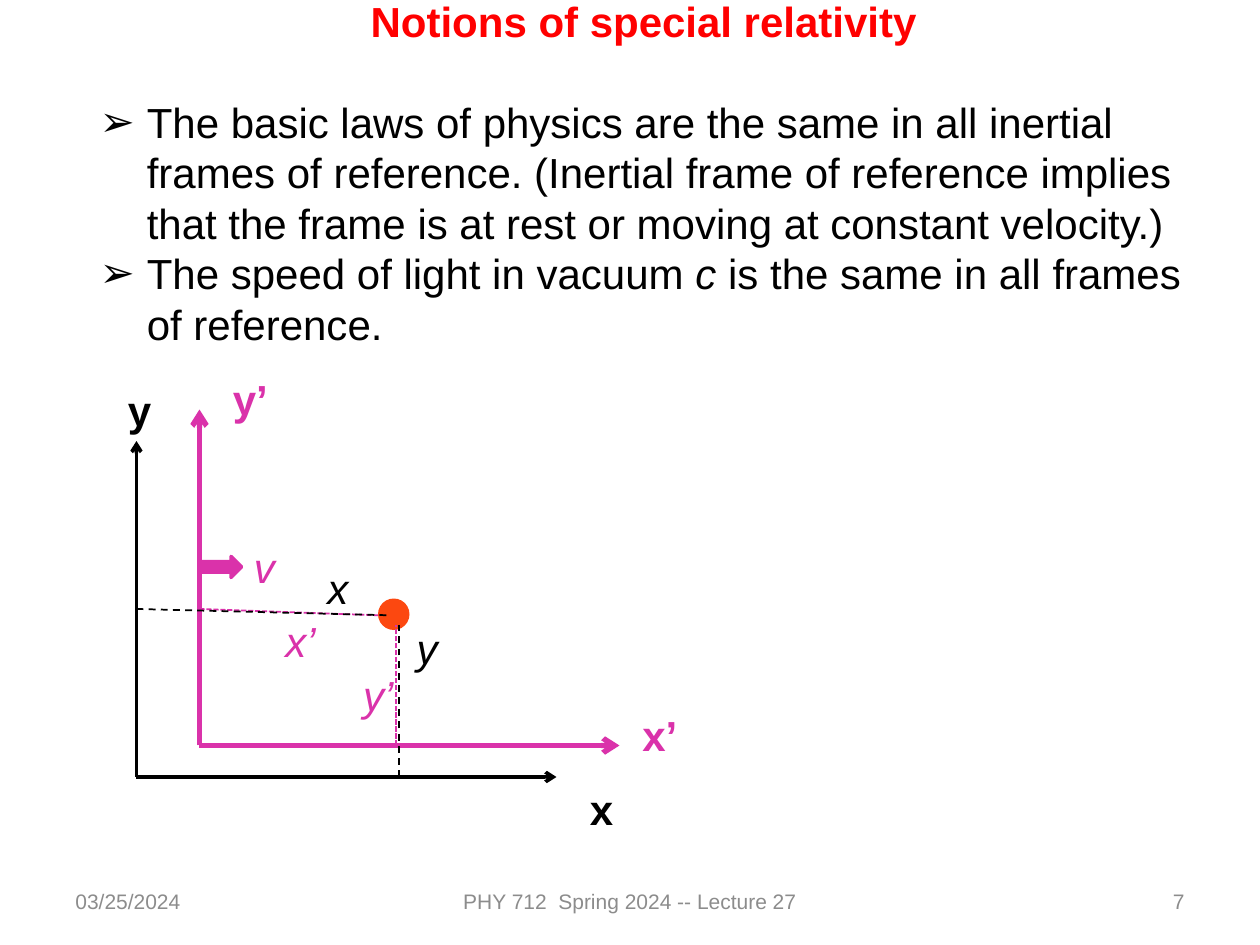
from dataclasses import dataclass

from lxml import etree
from pptx import Presentation
from pptx import util as u
from pptx.dml.color import RGBColor
from pptx.enum import dml, shapes, text
from pptx.oxml.ns import qn

SCALE = 7620


@dataclass(frozen=True)
class Theme:
    """Colours, font and type sizes of the slide."""
    font: str = "Arial"
    title: str = "FF0000"
    rest: str = "000000"
    moving: str = "DA32AA"
    ball: str = "FC4810"
    muted: str = "8C8C8C"
    body_size: int = 24
    footer_size: int = 12
    leading: float = 1.2


THEME = Theme()


def px(length):
    """Turn px into EMU."""
    return u.Emu(length * SCALE)


def rgb(colour):
    """Turn a hex string into a colour."""
    return RGBColor.from_string(colour)


def add_box(page, left, top, width, height):
    """Add a wrapping text box and return its frame."""
    frame = page.shapes.add_textbox(px(left), px(top), px(width), px(height)).text_frame
    frame.word_wrap = True
    return frame


def add_span(para, words, colour, size=THEME.body_size, bold=False, italic=False):
    """Add one run of text to a paragraph."""
    span = para.add_run()
    span.text = words
    font = span.font
    font.name, font.size = THEME.font, u.Pt(size)
    font.bold, font.italic = bold, italic
    font.color.rgb = rgb(colour)
    para.line_spacing = u.Pt(size * THEME.leading)


def add_bullet(para, symbol, indent):
    """Give a paragraph a hanging bullet."""
    props = para._p.get_or_add_pPr()
    props.set("marL", str(px(indent)))
    props.set("indent", str(px(-indent)))
    etree.SubElement(props, qn("a:buFont")).set("typeface", THEME.font)
    etree.SubElement(props, qn("a:buChar")).set("char", symbol)


def add_line(page, start, end, colour, weight, dash=None, arrow=False):
    """Draw a straight line, dashed or with an arrowhead at its end."""
    line = page.shapes.add_connector(
        shapes.MSO_CONNECTOR.STRAIGHT, *(px(value) for value in (*start, *end)))
    line.line.color.rgb = rgb(colour)
    line.line.width = u.Pt(weight)
    if dash:
        line.line.dash_style = dash
    if arrow:
        etree.SubElement(line.line._get_or_add_ln(), qn("a:tailEnd")).set("type", "arrow")
    etree.SubElement(line._element.spPr, qn("a:effectLst"))


def add_solid(page, kind, left, top, width, height, colour, weight=0):
    """Add a filled shape, outlined in its own colour if a weight is given."""
    shape = page.shapes.add_shape(kind, px(left), px(top), px(width), px(height))
    shape.shadow.inherit = False
    shape.fill.solid()
    shape.fill.fore_color.rgb = rgb(colour)
    if weight:
        shape.line.color.rgb = rgb(colour)
        shape.line.width = u.Pt(weight)
    else:
        shape.line.fill.background()


def add_footer(page, left, top, width, height):
    """Place date, course and page number along the foot."""
    align = text.PP_ALIGN
    parts = [
        ("03/25/2024", 0, 280, align.LEFT),
        ("PHY 712  Spring 2024 -- Lecture 27", (width - 380) // 2, 380, align.CENTER),
        ("7", width - 280, 280, align.RIGHT),
    ]
    for words, offset, part_width, side in parts:
        frame = add_box(page, left + offset, top, part_width, height)
        frame.vertical_anchor = text.MSO_ANCHOR.MIDDLE
        para = frame.paragraphs[0]
        para.alignment = side
        add_span(para, words, THEME.muted, THEME.footer_size)


def add_postulates(page, left, top, width, height):
    """Write the title and the two postulates."""
    frame = add_box(page, left, top, width, height)
    title = frame.paragraphs[0]
    title.alignment = text.PP_ALIGN.CENTER
    add_span(title, "Notions of special relativity", THEME.title, bold=True)
    title.space_after = u.Pt(THEME.body_size * THEME.leading)
    postulates = [
        [("The basic laws of physics are the same in all inertial frames of reference. "
          "(Inertial frame of reference implies that the frame is at rest or moving "
          "at constant velocity.)", False)],
        [("The speed of light in vacuum ", False), ("c", True),
         (" is the same in all frames of reference.", False)],
    ]
    for spans in postulates:
        para = frame.add_paragraph()
        for words, italic in spans:
            add_span(para, words, THEME.rest, italic=italic)
        add_bullet(para, "➢", 45)


def add_frames(page, left, top):
    """Draw the resting and the moving frame with the ball seen from both."""
    def at(x, y):
        return left + x, top + y

    for x, y, colour, weight in ((20, 390, THEME.rest, 2), (80, 360, THEME.moving, 3)):
        for end in ((x, y - 320), (x + 400, y)):
            add_line(page, at(x, y), at(*end), colour, weight, arrow=True)

    kinds = shapes.MSO_SHAPE
    add_solid(page, kinds.RIGHT_ARROW, *at(80, 180), 40, 20, THEME.moving, 2)
    add_solid(page, kinds.OVAL, *at(250, 220), 30, 30, THEME.ball)

    dashes = dml.MSO_LINE
    for start, end, colour, dash in (
        ((80, 230), (250, 236), THEME.moving, dashes.SQUARE_DOT),
        ((267, 360), (267, 245), THEME.moving, dashes.SQUARE_DOT),
        ((270, 390), (270, 245), THEME.rest, dashes.DASH),
        ((20, 230), (260, 236), THEME.rest, dashes.DASH),
    ):
        add_line(page, at(*start), at(*end), colour, 1, dash)

    for words, x, y, colour, is_axis in (
        ("x", 440, 390, THEME.rest, True),
        ("y", 0, 10, THEME.rest, True),
        ("y’", 100, 0, THEME.moving, True),
        ("x’", 490, 320, THEME.moving, True),
        ("v", 120, 160, THEME.moving, False),
        ("x’", 150, 230, THEME.moving, False),
        ("y’", 224, 282, THEME.moving, False),
        ("y", 275, 237, THEME.rest, False),
        ("x", 190, 180, THEME.rest, False),
    ):
        para = add_box(page, *at(x, y), 60, 60).paragraphs[0]
        add_span(para, words, colour, bold=is_axis, italic=not is_axis)


def main():
    """Build the slide and save it."""
    deck = Presentation()
    deck.slide_width, deck.slide_height = px(1200), px(900)
    page = deck.slides.add_slide(deck.slide_layouts[6])
    add_footer(page, 60, 834, 1080, 48)
    add_postulates(page, 83, -10, 1060, 352)
    add_frames(page, 110, 350)
    deck.save("out.pptx")


if __name__ == "__main__":
    main()
